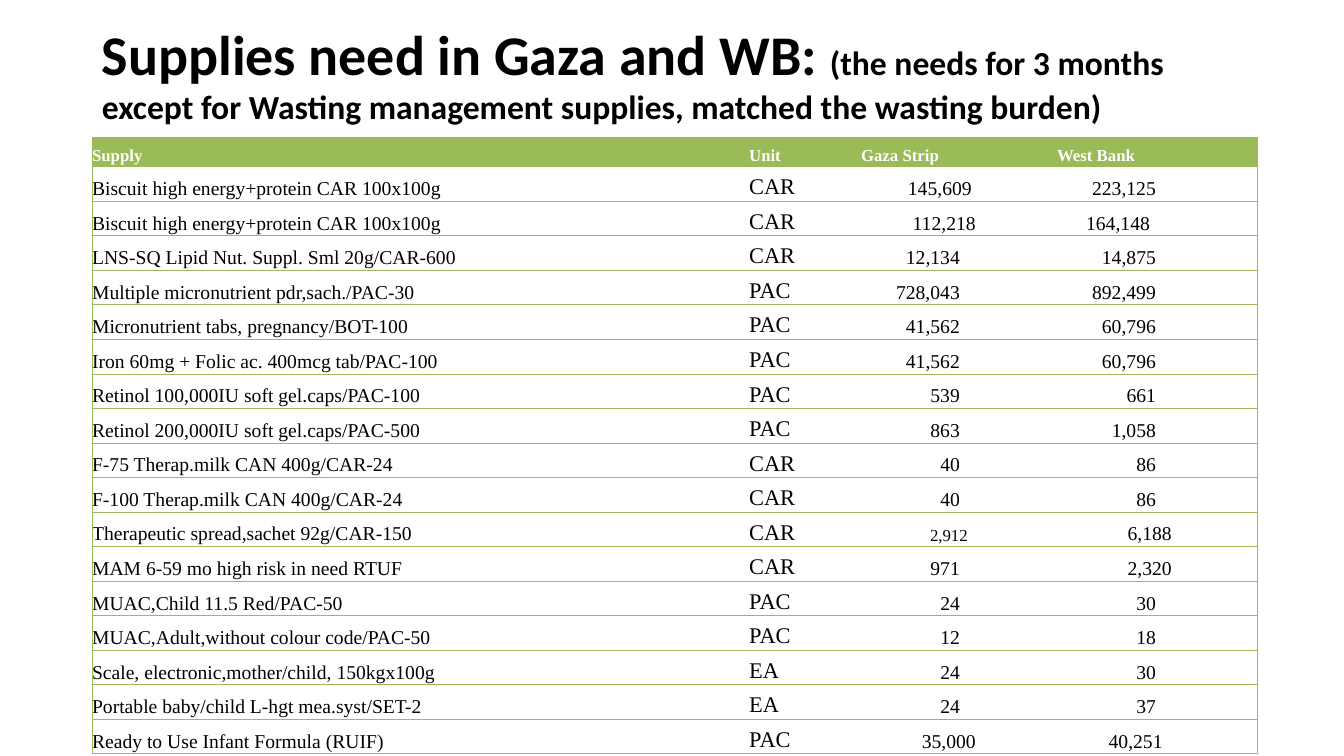
"""Build the supply needs slide."""
from dataclasses import dataclass

from lxml.etree import SubElement as Sub
from pptx import Presentation as Deck
from pptx.dml.color import RGBColor as Color
from pptx.enum.text import PP_ALIGN as Align
from pptx.oxml.ns import qn
from pptx.util import Cm, Pt


@dataclass(frozen=True)
class Theme:
    ink: str = "000000"
    white: str = "FFFFFF"
    green: str = "9BBA58"
    sans: str = "Calibri"
    serif: str = "Times New Roman"
    title: int = 40
    note: int = 24
    unit: int = 16
    body: int = 14
    small: int = 12
    rule: float = 0.5


THEME = Theme()

TITLE = [
    (47, [("Supplies need in Gaza and WB: ", THEME.title),
          ("(the needs for 3 months", THEME.note)]),
    (27.9, [("except for Wasting management supplies, matched the wasting burden)",
             THEME.note)]),
]
HEADS = ["Supply", "Unit", "Gaza Strip", "West Bank"]
NEEDS = [
    ("Biscuit high energy+protein CAR 100x100g", "CAR", "145,609", "223,125"),
    ("Biscuit high energy+protein CAR 100x100g", "CAR", "112,218", "164,148"),
    ("LNS-SQ Lipid Nut. Suppl. Sml 20g/CAR-600", "CAR", "12,134", "14,875"),
    ("Multiple micronutrient pdr,sach./PAC-30", "PAC", "728,043", "892,499"),
    ("Micronutrient tabs, pregnancy/BOT-100", "PAC", "41,562", "60,796"),
    ("Iron 60mg + Folic ac. 400mcg tab/PAC-100", "PAC", "41,562", "60,796"),
    ("Retinol 100,000IU soft gel.caps/PAC-100", "PAC", "539", "661"),
    ("Retinol 200,000IU soft gel.caps/PAC-500", "PAC", "863", "1,058"),
    ("F-75 Therap.milk CAN 400g/CAR-24", "CAR", "40", "86"),
    ("F-100 Therap.milk CAN 400g/CAR-24", "CAR", "40", "86"),
    ("Therapeutic spread,sachet 92g/CAR-150", "CAR", "2,912", "6,188"),
    ("MAM 6-59 mo high risk in need RTUF", "CAR", "971", "2,320"),
    ("MUAC,Child 11.5 Red/PAC-50", "PAC", "24", "30"),
    ("MUAC,Adult,without colour code/PAC-50", "PAC", "12", "18"),
    ("Scale, electronic,mother/child, 150kgx100g", "EA", "24", "30"),
    ("Portable baby/child L-hgt mea.syst/SET-2", "EA", "24", "37"),
    ("Ready to Use Infant Formula (RUIF)", "PAC", "35,000", "40,251"),
]
WIDTHS = [12.85, 5.69, 4.74, 6.08]
HEAD_LEFT = [0, 3.71, 0.84, 1.04]
HEAD = {"size": THEME.small, "lead": 14, "top": 0.22, "bold": True, "ink": THEME.white}
NAME = {"size": THEME.body, "lead": 16.1, "top": 0.27}
UNIT = {"size": THEME.unit, "lead": 18.5, "top": 0.18, "left": 3.71}
GAZA = {**NAME, "align": Align.RIGHT, "right": 1.41}
BANK = {**GAZA, "right": 2.55}
STYLES = [NAME, UNIT, GAZA, BANK]
SHIFTS = {
    (1, 2): {"right": 1.11},
    (2, 2): {"right": 1.01},
    (2, 3): {"right": 2.7},
    (11, 2): {"right": 1.21, "size": THEME.small, "lead": 13.7, "top": 0.35},
    (11, 3): {"right": 2.15},
    (12, 3): {"right": 2.15},
    (17, 2): {"right": 1.01},
    (17, 3): {"right": 2.38},
}
PLAIN = "{2D5ABB26-0587-4C30-8999-92F81FD0307C}"


def apply(item, form):
    for key, value in form.items():
        setattr(item, key, value)


class Page:
    def __init__(self, slide, theme):
        self.slide, self.theme = slide, theme

    def run(self, para, text, size, face, ink, bold):
        run = para.add_run()
        run.text = text
        apply(run.font, {"size": Pt(size), "name": face, "bold": bold})
        run.font.color.rgb = Color.from_string(ink)

    def text(self, box, lines):
        frame = self.slide.shapes.add_textbox(*map(Cm, box)).text_frame
        apply(frame, {"word_wrap": True, "margin_left": Cm(0.03), "margin_top": Cm(0.03),
                      "margin_right": 0, "margin_bottom": 0})
        for n, (lead, runs) in enumerate(lines):
            para = frame.add_paragraph() if n else frame.paragraphs[0]
            para.line_spacing = Pt(lead)
            for text, size in runs:
                self.run(para, text, size, self.theme.sans, self.theme.ink, True)

    def edge(self, cell, sides):
        props = cell._tc.get_or_add_tcPr()
        for side in sides:
            line = Sub(props, qn("a:ln" + side), w=str(Pt(self.theme.rule)))
            fill = Sub(line, qn("a:solidFill"))
            Sub(fill, qn("a:srgbClr"), val=self.theme.green)

    def cell(self, cell, text, form):
        apply(cell, {"margin_left": Cm(form.get("left", 0)), "margin_top": Cm(form["top"]),
                     "margin_right": Cm(form.get("right", 0)), "margin_bottom": 0})
        para = cell.text_frame.paragraphs[0]
        apply(para, {"line_spacing": Pt(form["lead"]),
                     "alignment": form.get("align", Align.LEFT)})
        self.run(para, text, form["size"], self.theme.serif,
                 form.get("ink", self.theme.ink), form.get("bold", False))

    def table(self, box, widths, heights, rows, style):
        frame = self.slide.shapes.add_table(len(rows), len(widths), *map(Cm, box))
        grid = frame.table
        apply(grid, {"first_row": False, "horz_banding": False})
        grid._tbl.tblPr.find(qn("a:tableStyleId")).text = PLAIN
        for col, width in zip(grid.columns, widths):
            col.width = Cm(width)
        for r, (row, height) in enumerate(zip(rows, heights)):
            grid.rows[r].height = Cm(height)
            for c, text in enumerate(row):
                cell = grid.cell(r, c)
                first, last = c == 0, c == len(widths) - 1
                self.edge(cell, "L" * first + "R" * last + "TB")
                if r:
                    cell.fill.background()
                else:
                    cell.fill.solid()
                    cell.fill.fore_color.rgb = Color.from_string(self.theme.green)
                self.cell(cell, text, style(r, c))


def style(r, c):
    if r == 0:
        return {**HEAD, "left": HEAD_LEFT[c]}
    return {**STYLES[c], **SHIFTS.get((r, c), {})}


def main():
    deck = Deck()
    apply(deck, {"slide_width": Cm(33.87), "slide_height": Cm(19.05)})
    page = Page(deck.slides.add_slide(deck.slide_layouts[6]), THEME)
    page.text((2.54, 0.51, 26.87, 2.72), TITLE)
    heights = [0.74] + [0.87] * len(NEEDS)
    page.table((2.32, 3.46, sum(WIDTHS), sum(heights)), WIDTHS, heights,
               [HEADS, *NEEDS], style)
    deck.save("out.pptx")


if __name__ == "__main__":
    main()
